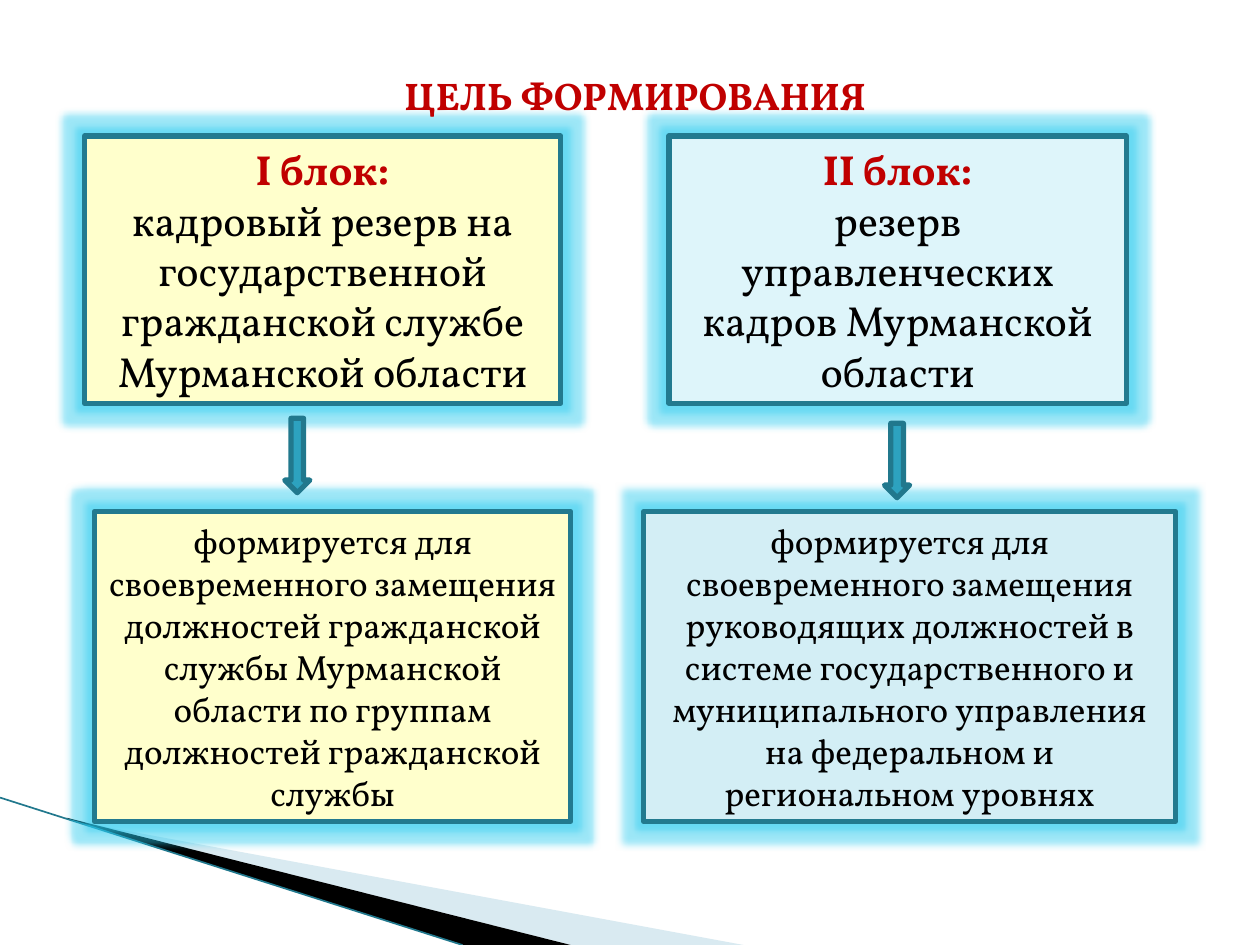
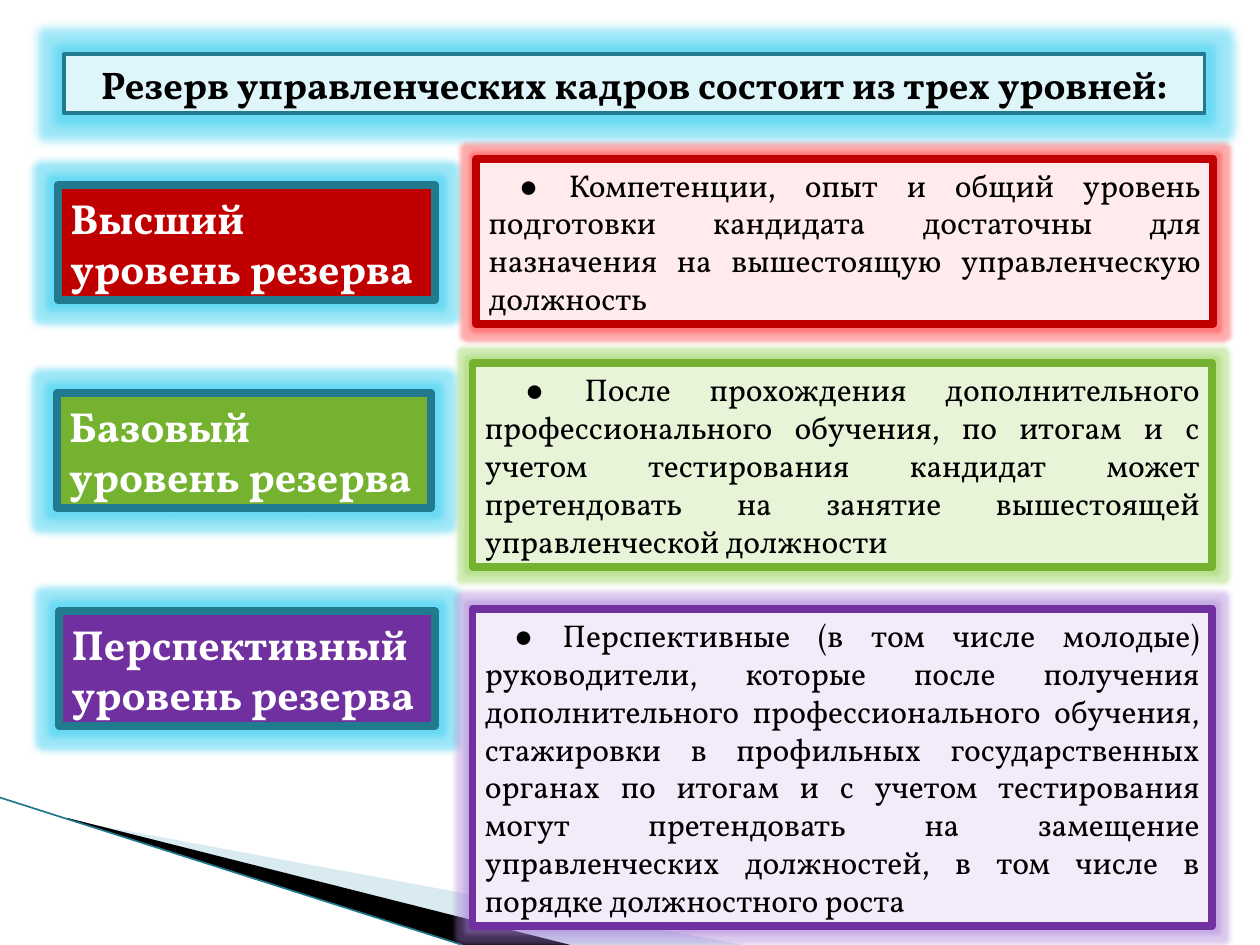
from dataclasses import dataclass

from lxml import etree
from pptx import Presentation
from pptx.dml.color import RGBColor
from pptx.enum.shapes import MSO_CONNECTOR, MSO_SHAPE
from pptx.enum.text import MSO_ANCHOR, MSO_AUTO_SIZE, PP_ALIGN
from pptx.oxml.ns import qn
from pptx.util import Inches, Pt

RECTANGLE = MSO_SHAPE.RECTANGLE
DOWN_ARROW = MSO_SHAPE.DOWN_ARROW
STRAIGHT = MSO_CONNECTOR.STRAIGHT
LEFT, CENTER, JUSTIFY = PP_ALIGN.LEFT, PP_ALIGN.CENTER, PP_ALIGN.JUSTIFY
MIDDLE = MSO_ANCHOR.MIDDLE
GROW = MSO_AUTO_SIZE.SHAPE_TO_FIT_TEXT

# The slide is a grid of 100 columns and 75 rows of equal squares
COLUMNS, ROWS = 100, 75
CELL = Inches(10) / COLUMNS


@dataclass(frozen=True)
class Theme:
    font: str = "Vollkorn"
    bullet_font: str = "Times New Roman"
    black: str = "000000"
    white: str = "FFFFFF"
    red: str = "C00000"
    green: str = "74B230"
    purple: str = "7030A0"
    teal: str = "2DA2BF"
    teal_edge: str = "227A8F"
    arrow_edge: str = "21788D"
    cream: str = "FFFFCC"
    ice: str = "DEF5FA"
    pale_teal: str = "D3EEF5"
    pale_red: str = "FFEBEB"
    pale_green: str = "E7F4D8"
    pale_purple: str = "F3EBF9"
    swoosh: str = "A0CBDC"
    glow_teal: str = "27CAEF"
    glow_red: str = "FF3030"
    glow_green: str = "92D050"
    glow_purple: str = "A67BD6"
    title_size: int = 22
    heading_size: int = 24
    purpose_size: int = 20
    body_size: int = 18


THEME = Theme()


@dataclass(frozen=True)
class Area:
    """A place on the grid: left column, top row, columns wide, rows high."""
    column: float
    row: float
    wide: float
    high: float

    def lengths(self) -> tuple:
        return tuple(cells(n) for n in (self.column, self.row, self.wide, self.high))


@dataclass(frozen=True)
class Piece:
    text: str
    size: int
    color: str = THEME.black
    bold: bool = False
    font: str = THEME.font


@dataclass(frozen=True)
class Glow:
    color: str = THEME.glow_teal
    radius: float = 8
    opacity: int = 45


@dataclass(frozen=True)
class Box:
    area: Area
    fill: str
    paragraphs: tuple
    align: PP_ALIGN = CENTER
    edge: str = THEME.teal_edge
    edge_width: float = 3
    glow: Glow = Glow()


@dataclass(frozen=True)
class Level:
    name: str
    label_area: Area
    detail_area: Area
    color: str
    pale: str
    glow: str
    detail: str


def cells(count: float) -> int:
    return round(count * CELL)


def set_values(target, values: dict) -> None:
    for name, value in values.items():
        setattr(target, name, value)


def set_opacity(color_element, percent: int) -> None:
    etree.SubElement(color_element, qn("a:alpha")).set("val", str(percent * 1000))


def paint(shape, fill: str, edge: str = "", width: float = 0) -> None:
    shape.shadow.inherit = False
    shape.fill.solid()
    shape.fill.fore_color.rgb = RGBColor.from_string(fill)
    if edge:
        shape.line.color.rgb = RGBColor.from_string(edge)
        shape.line.width = Pt(width)
    else:
        shape.line.fill.background()


def add_glow(shape, glow: Glow) -> None:
    effects = shape._element.spPr.find(qn("a:effectLst"))
    halo = etree.SubElement(effects, qn("a:glow"))
    halo.set("rad", str(Pt(glow.radius)))
    color = etree.SubElement(halo, qn("a:srgbClr"))
    color.set("val", glow.color)
    set_opacity(color, glow.opacity)


def write(frame, paragraphs: tuple, align: PP_ALIGN) -> None:
    set_values(frame, {"word_wrap": True, "auto_size": GROW, "vertical_anchor": MIDDLE})
    for index, pieces in enumerate(paragraphs):
        paragraph = frame.add_paragraph() if index else frame.paragraphs[0]
        paragraph.alignment = align
        for piece in pieces:
            run = paragraph.add_run()
            run.text = piece.text
            set_values(run.font, {"name": piece.font, "size": Pt(piece.size), "bold": piece.bold})
            run.font.color.rgb = RGBColor.from_string(piece.color)


def draw_box(slide, box: Box) -> None:
    shape = slide.shapes.add_shape(RECTANGLE, *box.area.lengths())
    paint(shape, box.fill, box.edge, box.edge_width)
    add_glow(shape, box.glow)
    write(shape.text_frame, box.paragraphs, box.align)


def draw_arrow(slide, area: Area) -> None:
    arrow = slide.shapes.add_shape(DOWN_ARROW, *area.lengths())
    paint(arrow, THEME.teal, THEME.arrow_edge, 3)


def draw_outline(slide, points: tuple, fill: str):
    corners = [(cells(x), cells(y)) for x, y in points]
    builder = slide.shapes.build_freeform(*corners[0])
    builder.add_line_segments(corners[1:], close=True)
    outline = builder.convert_to_shape()
    paint(outline, fill)
    return outline


def add_base_slide(presentation):
    """A blank slide with the sweeping corner that every slide carries."""
    slide = presentation.slides.add_slide(presentation.slide_layouts[6])
    pale = draw_outline(slide, ((5.5, 65.1), (59, ROWS), (45.3, ROWS), (5.5, 65)), THEME.swoosh)
    set_opacity(pale._element.spPr.find(qn("a:solidFill"))[0], 40)
    draw_outline(slide, ((5.3, 64.9), (45.3, ROWS), (36.8, ROWS), (5.4, 65)), THEME.black)
    line = slide.shapes.add_connector(STRAIGHT, 0, cells(63.3), cells(36.7), cells(ROWS))
    line.line.color.rgb = RGBColor.from_string(THEME.arrow_edge)
    line.line.width = Pt(0.95)
    etree.SubElement(line._element.spPr, qn("a:effectLst"))
    return slide


def block(area: Area, fill: str, name: str, text: str) -> Box:
    size = THEME.heading_size
    return Box(area, fill, ((Piece(name, size, THEME.red, True),), (Piece(text, size),)))


def purpose(area: Area, fill: str, text: str) -> Box:
    return Box(area, fill, ((Piece(text, THEME.purpose_size),),))


# Slide 1: two blocks, each with its purpose below
PURPOSE_BOXES = (
    purpose(Area(7.5, 40.6, 37.8, 24.6), THEME.cream,
            "формируется для своевременного замещения должностей гражданской службы "
            "Мурманской области по группам должностей гражданской службы"),
    purpose(Area(51.1, 40.6, 42.2, 24.6), THEME.pale_teal,
            "формируется для своевременного замещения руководящих должностей в системе "
            "государственного и муниципального управления на федеральном и региональном уровнях"),
)
BLOCK_BOXES = (
    block(Area(6.7, 10.8, 37.8, 21.2), THEME.cream, "I блок:",
          "кадровый резерв на государственной гражданской службе Мурманской области"),
    block(Area(53.1, 10.8, 36.3, 21.2), THEME.ice, "II блок:",
          "резерв управленческих кадров Мурманской области"),
)
ARROWS = (Area(22.6, 33.2, 2, 5.9), Area(70.2, 33.6, 2, 5.9))

# Slide 2: three levels, each a label with its detail
LEVELS = (
    Level("Высший", Area(4.6, 14.7, 29.9, 9.1), Area(37.8, 12.6, 58.5, 13.1),
          THEME.red, THEME.pale_red, THEME.glow_red,
          "Компетенции, опыт и общий уровень подготовки кандидата достаточны для "
          "назначения на вышестоящую управленческую должность"),
    Level("Базовый", Area(4.5, 31.2, 29.7, 9.1), Area(37.5, 28.8, 58.7, 16.2),
          THEME.green, THEME.pale_green, THEME.glow_green,
          "После прохождения дополнительного профессионального обучения, по итогам и с "
          "учетом тестирования кандидат может претендовать на занятие вышестоящей "
          "управленческой должности"),
    Level("Перспективный", Area(4.7, 48.5, 29.8, 9.1), Area(37.5, 48.3, 58.7, 25.2),
          THEME.purple, THEME.pale_purple, THEME.glow_purple,
          "Перспективные (в том числе молодые) руководители, которые после получения "
          "дополнительного профессионального обучения, стажировки в профильных "
          "государственных органах по итогам и с учетом тестирования могут претендовать "
          "на замещение управленческих должностей, в том числе в порядке должностного роста"),
)


def level_label(level: Level) -> Box:
    lines = (level.name, "уровень резерва")
    paragraphs = tuple((Piece(line, THEME.heading_size, THEME.white, True),) for line in lines)
    return Box(level.label_area, level.color, paragraphs, LEFT, edge_width=4.5)


def level_detail(level: Level) -> Box:
    bullet = Piece(" ● ", THEME.body_size, font=THEME.bullet_font)
    pieces = (bullet, Piece(level.detail, THEME.body_size))
    return Box(level.detail_area, level.pale, (pieces,), JUSTIFY, level.color, 4.5,
               Glow(level.glow, 5, 40))


def build_purpose_slide(presentation) -> None:
    slide = add_base_slide(presentation)
    for box in PURPOSE_BOXES + BLOCK_BOXES:
        draw_box(slide, box)
    for area in ARROWS:
        draw_arrow(slide, area)
    # The title comes last, so that no glow covers it
    title = slide.shapes.add_textbox(*Area(13, 5.2, 74.8, 4.7).lengths())
    heading = Piece("ЦЕЛЬ ФОРМИРОВАНИЯ", THEME.title_size, THEME.red, True)
    write(title.text_frame, ((heading,),), CENTER)


def build_levels_slide(presentation) -> None:
    slide = add_base_slide(presentation)
    heading = Piece("Резерв управленческих кадров состоит из трех уровней:",
                    THEME.title_size, bold=True)
    draw_box(slide, Box(Area(5.1, 4.3, 90.5, 4.7), THEME.ice, ((heading,),),
                        edge_width=2.25, glow=Glow(radius=10.5)))
    for make_box in (level_label, level_detail):
        for level in LEVELS:
            draw_box(slide, make_box(level))


def main() -> None:
    presentation = Presentation()
    set_values(presentation, {"slide_width": cells(COLUMNS), "slide_height": cells(ROWS)})
    build_purpose_slide(presentation)
    build_levels_slide(presentation)
    presentation.save("out.pptx")


if __name__ == "__main__":
    main()
